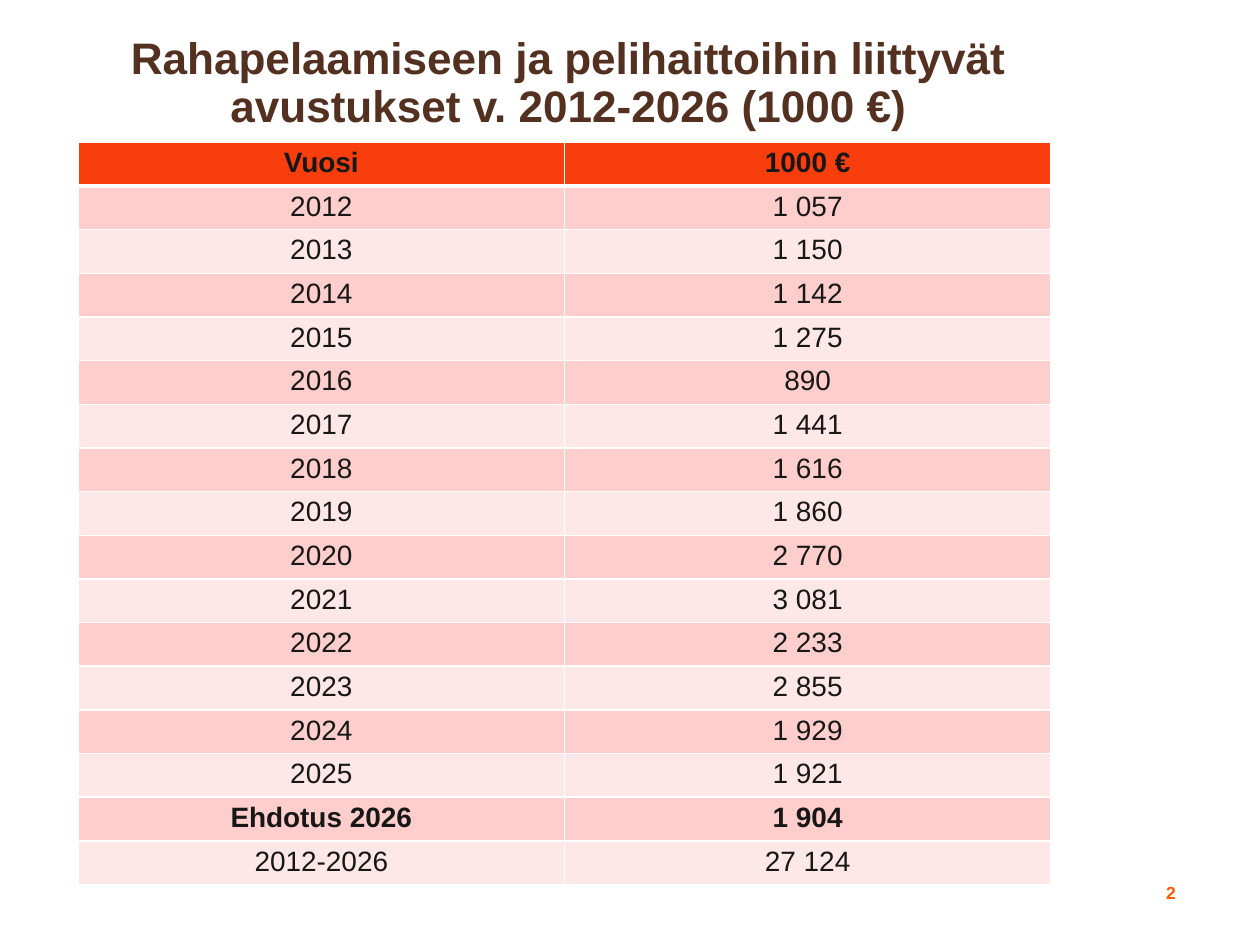
from dataclasses import dataclass

from lxml import etree
from pptx import Presentation
from pptx import util as u
from pptx.dml.color import RGBColor
from pptx.enum import text
from pptx.oxml import ns


@dataclass(frozen=True)
class Theme:
    """Colours, font and type sizes of the slide."""
    font: str = "Arial"
    title: str = "543020"
    body: str = "181717"
    number: str = "FD5705"
    header: str = "F93E0D"
    bands: tuple = ("FDCECC", "FEE8E7")
    border: str = "FFFFFF"
    title_size: float = 25.2
    body_size: float = 16
    number_size: float = 10


THEME = Theme()
LEFT = 0.62
COL_WIDTH = 3.86
ROW_HEIGHT = 0.31
TITLE = "Rahapelaamiseen ja pelihaittoihin liittyvät avustukset v. 2012-2026 (1000 €)"
HEADER = ("Vuosi", "1000 €")
PROPOSAL = "Ehdotus 2026"
GRANTS = (1057, 1150, 1142, 1275, 890, 1441, 1616, 1860,
          2770, 3081, 2233, 2855, 1929, 1921, 1904)


def add_run(p, words, size, color, bold, align):
    """Add one formatted run to an aligned paragraph."""
    p.alignment = align
    r = p.add_run()
    r.text = words
    r.font.name = THEME.font
    r.font.size = u.Pt(size)
    r.font.bold = bold
    r.font.color.rgb = RGBColor.from_string(color)


def place(sp, left, top, width, height):
    """Position a shape in inches."""
    sp.left, sp.top = u.Inches(left), u.Inches(top)
    sp.width, sp.height = u.Inches(width), u.Inches(height)


def add_title(s):
    """Fill and format the title placeholder."""
    sp = s.shapes.title
    place(sp, LEFT, 0.2, 7.78, 0.94)
    tf = sp.text_frame
    tf.word_wrap = True
    tf.auto_size = text.MSO_AUTO_SIZE.NONE
    tf.vertical_anchor = text.MSO_ANCHOR.MIDDLE
    p = tf.paragraphs[0]
    p.line_spacing = 0.9
    add_run(p, TITLE, THEME.title_size, THEME.title, True, text.PP_ALIGN.CENTER)


def add_page_number(s, number):
    """Add the page number at the lower right."""
    sp = s.shapes.add_textbox(u.Inches(8.77), u.Inches(6.95), u.Inches(0.66), u.Inches(0.4))
    tf = sp.text_frame
    tf.word_wrap = True
    add_run(tf.paragraphs[0], number, THEME.number_size, THEME.number, True,
            text.PP_ALIGN.RIGHT)


def set_borders(cell, widths):
    """Draw the cell borders, given as points by side."""
    tc_pr = cell._tc.get_or_add_tcPr()
    for side, width in widths.items():
        ln = etree.SubElement(tc_pr, ns.qn(f"a:ln{side}"), w=str(u.Pt(width)))
        fill = etree.SubElement(ln, ns.qn("a:solidFill"))
        etree.SubElement(fill, ns.qn("a:srgbClr"), val=THEME.border)


def format_cell(cell, words, fill, bold, top, bottom):
    """Fill one table cell with centred text."""
    cell.margin_left = cell.margin_right = u.Inches(0.17)
    cell.margin_top = cell.margin_bottom = u.Inches(0.04)
    set_borders(cell, {"L": 1, "R": 1, "T": top, "B": bottom})
    cell.fill.solid()
    cell.fill.fore_color.rgb = RGBColor.from_string(fill)
    add_run(cell.text_frame.paragraphs[0], words, THEME.body_size, THEME.body, bold,
            text.PP_ALIGN.CENTER)


def table_rows():
    """Return the header, the yearly grants and their total."""
    years = [str(2012 + i) for i in range(len(GRANTS) - 1)]
    labels = years + [PROPOSAL, "2012-2026"]
    amounts = [f"{v:,}".replace(",", " ") for v in (*GRANTS, sum(GRANTS))]
    return [HEADER, *zip(labels, amounts)]


def add_grants_table(s):
    """Add the banded table of grants."""
    rows = table_rows()
    frame = s.shapes.add_table(len(rows), len(HEADER), u.Inches(LEFT), u.Inches(1.13),
                               u.Inches(COL_WIDTH * len(HEADER)),
                               u.Inches(ROW_HEIGHT * len(rows)))
    table = frame.table
    for column in table.columns:
        column.width = u.Inches(COL_WIDTH)
    for i, row in enumerate(rows):
        table.rows[i].height = u.Inches(ROW_HEIGHT)
        fill = THEME.bands[(i - 1) % 2] if i else THEME.header
        bold = i == 0 or row[0] == PROPOSAL
        for j, words in enumerate(row):
            format_cell(table.cell(i, j), words, fill, bold,
                        3 if i == 1 else 1, 3 if i == 0 else 1)


def main():
    """Build and save the slide."""
    prs = Presentation()
    prs.slide_width, prs.slide_height = u.Inches(10), u.Inches(7.5)
    s = prs.slides.add_slide(prs.slide_layouts[5])
    add_title(s)
    add_page_number(s, "2")
    add_grants_table(s)
    prs.save("out.pptx")


if __name__ == "__main__":
    main()
